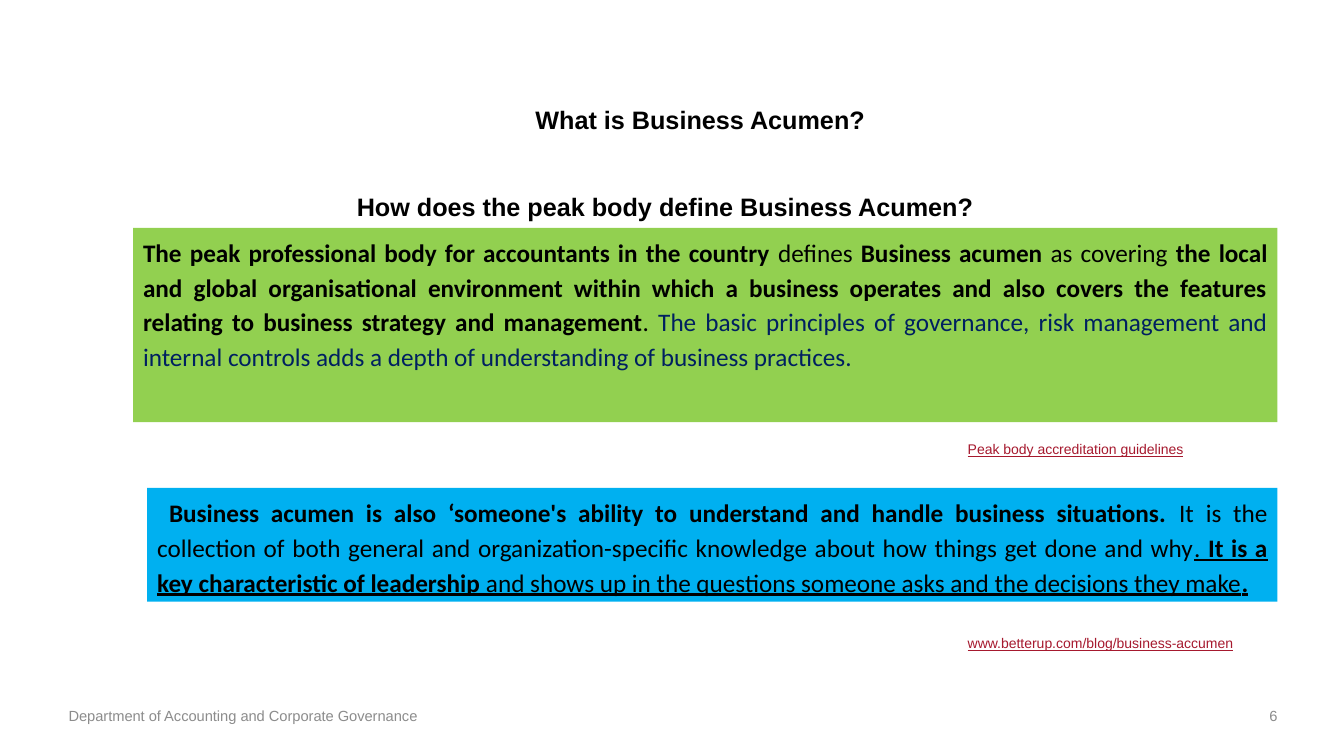
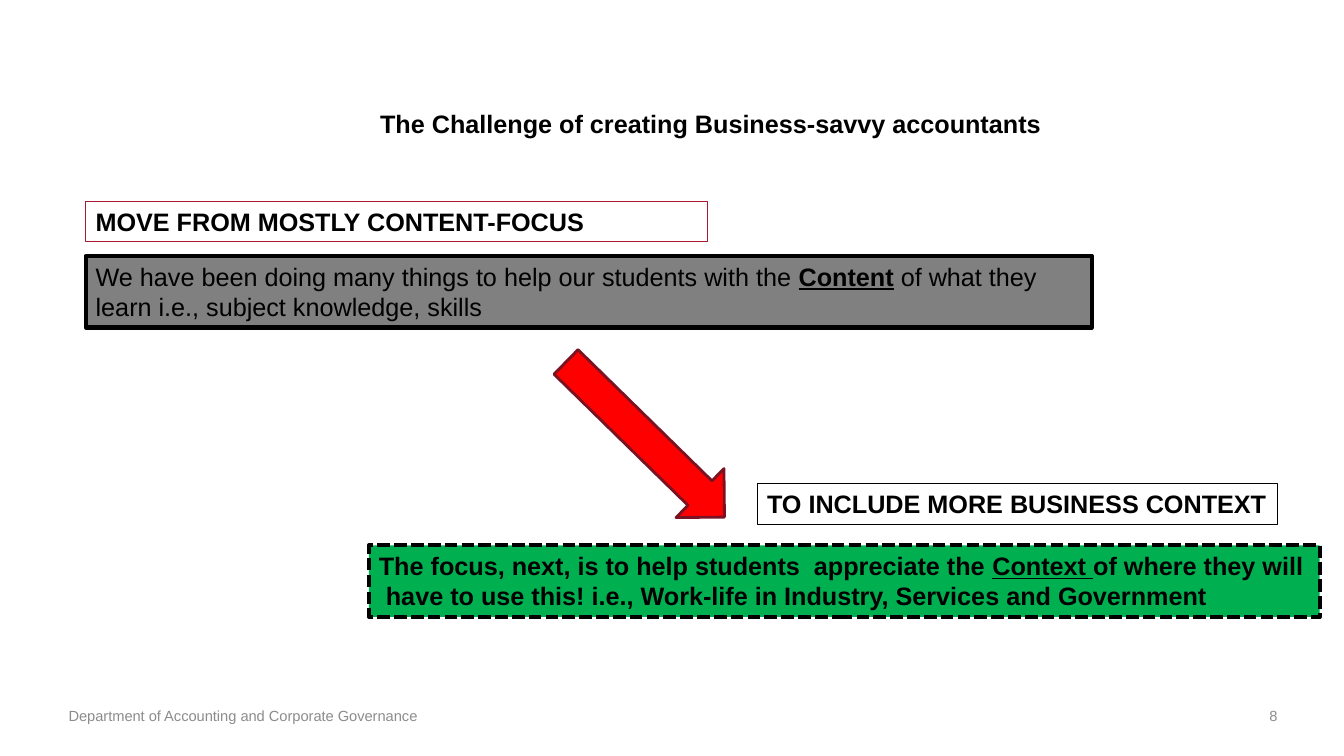
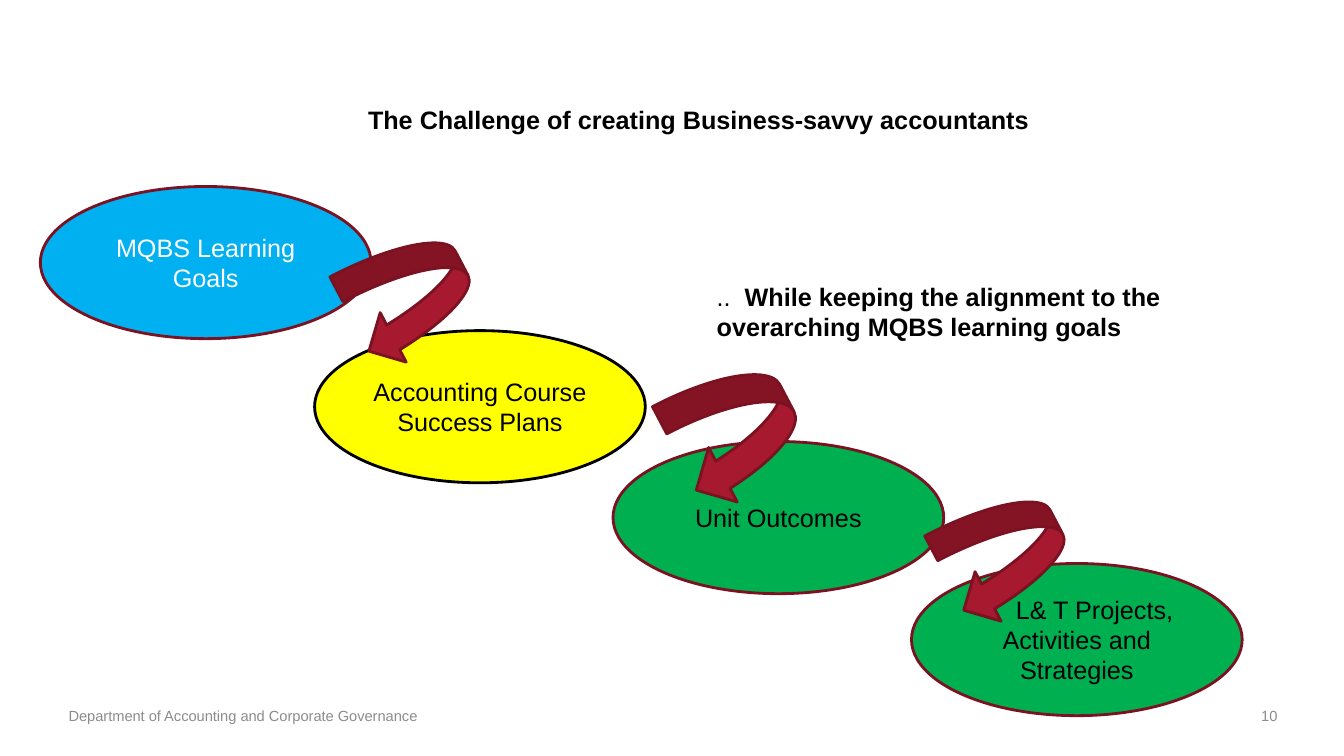
"""Builds three slides on business acumen for accounting students."""
from pptx import Presentation
from pptx.dml.color import RGBColor as Rgb
from pptx.enum.dml import MSO_LINE as Dash
from pptx.enum.shapes import MSO_SHAPE as Kind
from pptx.enum.text import MSO_ANCHOR as Anchor, MSO_AUTO_SIZE as Auto, PP_ALIGN as Align
from pptx.util import Inches, Pt

BLACK = Rgb(0x00, 0x00, 0x00)
WHITE = Rgb(0xFF, 0xFF, 0xFF)
GRAY = Rgb(0x80, 0x80, 0x80)
PALE = Rgb(0x8C, 0x8C, 0x8C)
NAVY = Rgb(0x00, 0x20, 0x60)
LIME = Rgb(0x92, 0xD0, 0x50)
GREEN = Rgb(0x00, 0xB0, 0x50)
BLUE = Rgb(0x00, 0xB0, 0xF0)
GOLD = Rgb(0xFF, 0xFF, 0x00)
RED = Rgb(0xFF, 0x00, 0x00)
WINE = Rgb(0xA6, 0x19, 0x2E)
DARK = Rgb(0x7B, 0x12, 0x22)

FOOTER = "Department of Accounting and Corporate Governance"
SAVVY = "The Challenge of creating Business-savvy accountants"
TITLES = [
    ("What is Business Acumen?", 3.2, 0.98, Align.CENTER, 6),
    (SAVVY, 3.67, 1.02, Align.LEFT, 8),
    (SAVVY, 3.55, 0.98, Align.LEFT, 10),
]

ASK = [("How does the peak body define Business Acumen?", "b")]
QUOTES = [
    ((1.32, 2.26, 11.35, 1.93), LIME, [
        ("The peak professional body for accountants in the country", "b"),
        (" defines ", ""),
        ("Business acumen ", "b"),
        ("as covering ", ""),
        ("the local and global organisational environment within which a business "
         "operates and also covers the features relating to business strategy and "
         "management", "b"),
        (". ", ""),
        ("The basic principles of governance, risk management and internal controls "
         "adds a depth of understanding of business practices.", "n"),
    ]),
    ((1.46, 4.84, 11.21, 1.13), BLUE, [
        (" ", ""),
        ("Business acumen is also ‘someone's ability to understand and handle "
         "business situations. ", "b"),
        ("It is the collection of both general and organization-specific knowledge "
         "about how things get done and why", ""),
        (". ", "u"),
        ("It is a key characteristic of leadership", "bu"),
        (" and shows up in the questions someone asks and the decisions they make", "u"),
        (".", "bu"),
    ]),
]
SOURCES = [
    ("Peak body accreditation guidelines", 4.32),
    ("www.betterup.com/blog/business-accumen", 6.25),
]

PANELS = [
    ((0.85, 2.54, 9.98, 0.71), GRAY, BLACK, 3, None, [
        ("We have been doing many things to help our students with the ", ""),
        ("Content", "bu"),
        (" of what they learn i.e., subject knowledge, skills", ""),
    ]),
    ((3.66, 5.41, 9.43, 0.71), GREEN, BLACK, 3, Dash.SQUARE_DOT, [
        ("The focus, next, is to help students  appreciate the ", "b"),
        ("Context ", "bu"),
        ("of where they will  have to use this! i.e., Work-life in Industry, "
         "Services and Government", "b"),
    ]),
    ((0.85, 2, 6.17, 0.4), None, WINE, 0.75, None,
     [("MOVE FROM MOSTLY CONTENT-FOCUS", "b")]),
    ((7.51, 4.8, 5.16, 0.4), None, BLACK, 0.75, None,
     [("TO INCLUDE MORE BUSINESS CONTEXT", "b")]),
]

STAGES = [
    ("MQBS Learning Goals", 0.4, 1.85, BLUE, DARK, WHITE, 0),
    ("Accounting Course Success Plans", 3.12, 3.28, GOLD, BLACK, BLACK, 0),
    ("Unit Outcomes", 6.08, 4.38, GREEN, DARK, BLACK, 0),
    ("L& T Projects, Activities and Strategies", 9.04, 5.59, GREEN, DARK, BLACK, 0.35),
]
LOOPS = [(3.46, 2.4, 1.11), (6.69, 3.68, 1.24), (9.36, 4.97, 1.11)]
ALIGNED = [
    (".. ", ""),
    (" While keeping the alignment to the overarching MQBS learning goals", "b"),
]


def place(item, box):
    item.left, item.top, item.width, item.height = map(Inches, box)


def write(item, runs, size=18, color=BLACK, face="Arial", align=Align.LEFT,
          anchor=Anchor.TOP):
    """Fills one paragraph; marks b, u and n mean bold, underlined and navy."""
    frame = item.text_frame
    frame.word_wrap = True
    frame.auto_size = Auto.NONE
    frame.vertical_anchor = anchor
    para = frame.paragraphs[0]
    para.alignment = align
    for text, marks in runs:
        run = para.add_run()
        run.text = text
        font = run.font
        font.name, font.size = face, Pt(size)
        font.bold, font.underline = "b" in marks, "u" in marks
        font.color.rgb = NAVY if "n" in marks else color
    return para


def label(slide, box, runs, inset=True, **style):
    item = slide.shapes.add_textbox(*map(Inches, box))
    if not inset:
        frame = item.text_frame
        frame.margin_left = frame.margin_right = 0
        frame.margin_top = frame.margin_bottom = 0
    return write(item, runs, **style)


def draw(slide, kind, box, fill=None, line=None, width=2, turn=0):
    item = slide.shapes.add_shape(kind, *map(Inches, box))
    item.shadow.inherit = False
    item.rotation = turn
    if fill is None:
        item.fill.background()
    else:
        item.fill.solid()
        item.fill.fore_color.rgb = fill
    if line is None:
        item.line.fill.background()
    else:
        item.line.color.rgb = line
        item.line.width = Pt(width)
    return item


def start(deck, title, left, top, align, number):
    slide = deck.slides.add_slide(deck.slide_layouts[5])
    head = slide.shapes.title
    place(head, (left, top, 7.49, 0.4))
    write(head, [(title, "b")], align=align)
    small = dict(inset=False, size=10.5, color=PALE, anchor=Anchor.MIDDLE)
    label(slide, (0.68, 6.9, 5.98, 0.4), [(FOOTER, "")], **small)
    label(slide, (12.32, 6.9, 0.35, 0.4), [(str(number), "")], align=Align.RIGHT, **small)
    return slide


def define(slide):
    for box, fill, runs in QUOTES:
        item = draw(slide, Kind.RECTANGLE, box, fill)
        para = write(item, runs, face="Calibri", align=Align.JUSTIFY)
        para.line_spacing, para.space_after = 1.15, Pt(8)
    label(slide, (3.44, 1.85, 7.02, 0.4), ASK)
    for text, top in SOURCES:
        label(slide, (9.5, top, 3.17, 0.27), [(text, "u")], size=10, color=WINE)


def shift(slide):
    for box, fill, line, width, dash, runs in PANELS:
        item = draw(slide, Kind.RECTANGLE, box, fill, line, width)
        if dash:
            item.line.dash_style = dash
        write(item, runs)
    draw(slide, Kind.DOWN_ARROW, (6.06, 3.26, 0.68, 2.2), RED, DARK, turn=314.4)


def cascade(slide):
    for text, left, top, fill, line, color, indent in STAGES:
        item = draw(slide, Kind.OVAL, (left, top, 3.28, 1.51), fill, line)
        para = write(item, [(text, "")], color=color, align=Align.CENTER,
                     anchor=Anchor.MIDDLE)
        if indent:
            para._p.get_or_add_pPr().set("indent", str(Inches(indent)))
    for left, top, height in LOOPS:
        draw(slide, Kind.CURVED_LEFT_ARROW, (left, top, 1.22, height), WINE, DARK,
             turn=332.3)
    label(slide, (7.01, 2.74, 5.31, 0.71), ALIGNED)


def main():
    deck = Presentation()
    deck.slide_width, deck.slide_height = Inches(13.33), Inches(7.5)
    for head, build in zip(TITLES, (define, shift, cascade)):
        build(start(deck, *head))
    deck.save("out.pptx")


if __name__ == "__main__":
    main()
